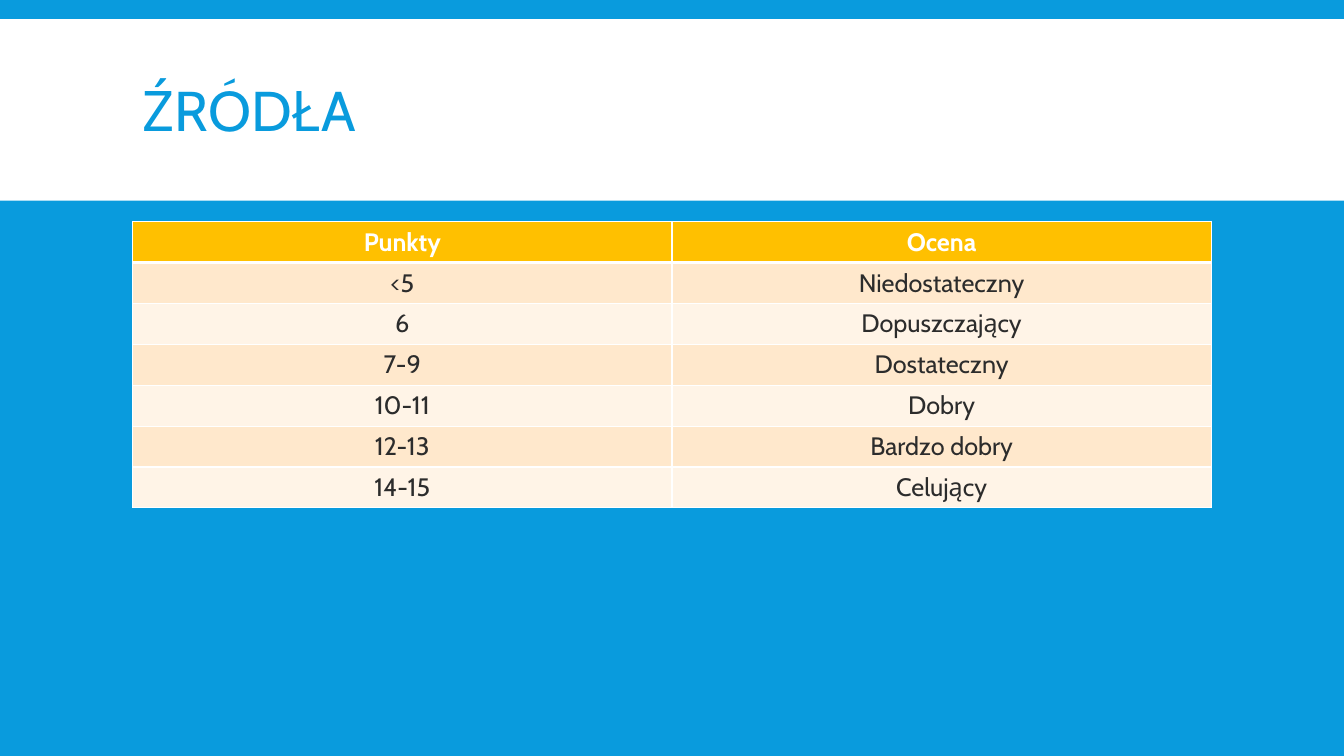
from lxml.etree import SubElement
from pptx import Presentation
from pptx.dml.color import RGBColor
from pptx.enum.shapes import MSO_SHAPE
from pptx.enum.text import MSO_ANCHOR, MSO_AUTO_SIZE, PP_ALIGN
from pptx.oxml.ns import qn
from pptx.util import Pt

BLUE, WHITE, AMBER, DARK = "099BDD", "FFFFFF", "FFC000", "2C2C2C"
STRIPES = ("FFE8CC", "FFF4E7")
GRADES = [
    ("Punkty", "Ocena"),
    ("<5", "Niedostateczny"),
    ("6", "Dopuszczający"),
    ("7-9", "Dostateczny"),
    ("10-11", "Dobry"),
    ("12-13", "Bardzo dobry"),
    ("14-15", "Celujący"),
]


def paint(color_format, value):
    """Set a colour format from a hex string."""
    color_format.rgb = RGBColor.from_string(value)


class SlideBuilder:
    """Holds the font and the current page, and adds styled elements."""

    def __init__(self, page, font="Cabin"):
        """Keep the page and its font."""
        self.page = page
        self.font = font

    def background(self, color):
        """Fill the page background."""
        fill = self.page.background.fill
        fill.solid()
        paint(fill.fore_color, color)

    def band(self, left, top, width, height, color):
        """Add a plain rectangle behind everything else."""
        box = self.page.shapes.add_shape(
            MSO_SHAPE.RECTANGLE, Pt(left), Pt(top), Pt(width), Pt(height))
        box.shadow.inherit = False
        box.fill.solid()
        paint(box.fill.fore_color, color)
        box.line.fill.background()
        self.page.shapes._spTree.insert(2, box._element)

    def span(self, para, text, size, color, bold=False):
        """Add one formatted run."""
        span = para.add_run()
        span.text = text
        span.font.name = self.font
        span.font.size = Pt(size)
        span.font.bold = bold
        paint(span.font.color, color)

    def title(self, text, left, top, width, height):
        """Place and fill the title placeholder."""
        box = self.page.shapes.title
        box.left, box.top, box.width, box.height = map(Pt, (left, top, width, height))
        frame = box.text_frame
        frame.auto_size = MSO_AUTO_SIZE.NONE
        frame.vertical_anchor = MSO_ANCHOR.MIDDLE
        para = frame.paragraphs[0]
        para.alignment = PP_ALIGN.LEFT
        para.line_spacing = 0.85
        self.span(para, text, 40, BLUE)

    def borders(self, cell, bottom):
        """Draw white lines around a cell."""
        properties = cell._tc.get_or_add_tcPr()
        for side, width in (("L", 1), ("R", 1), ("T", 1), ("B", bottom)):
            line = SubElement(properties, qn(f"a:ln{side}"), w=str(Pt(width)))
            fill = SubElement(line, qn("a:solidFill"))
            SubElement(fill, qn("a:srgbClr"), val=WHITE)

    def table(self, rows, left, top, width, row_height):
        """Add a striped table with a heading row."""
        table = self.page.shapes.add_table(
            len(rows), len(rows[0]), Pt(left), Pt(top),
            Pt(width), Pt(row_height * len(rows))).table
        for index, texts in enumerate(rows):
            heading = index == 0
            table.rows[index].height = Pt(row_height)
            for column, text in enumerate(texts):
                cell = table.cell(index, column)
                self.borders(cell, 3 if heading else 1)
                cell.fill.solid()
                paint(cell.fill.fore_color, AMBER if heading else STRIPES[(index - 1) % 2])
                para = cell.text_frame.paragraphs[0]
                para.alignment = PP_ALIGN.CENTER
                self.span(para, text, 18, WHITE if heading else DARK, heading)


def main():
    """Build and save the deck."""
    deck = Presentation()
    deck.slide_width, deck.slide_height = Pt(960), Pt(540)
    builder = SlideBuilder(deck.slides.add_slide(deck.slide_layouts[5]))
    builder.background(BLUE)
    builder.band(0, 13.7, 960, 129.6, WHITE)
    builder.title("ŹRÓDŁA", 94.8, 22.3, 770.4, 118.8)
    builder.table(GRADES, 94.8, 158.4, 770.4, 29.2)
    deck.save("out.pptx")


if __name__ == "__main__":
    main()
